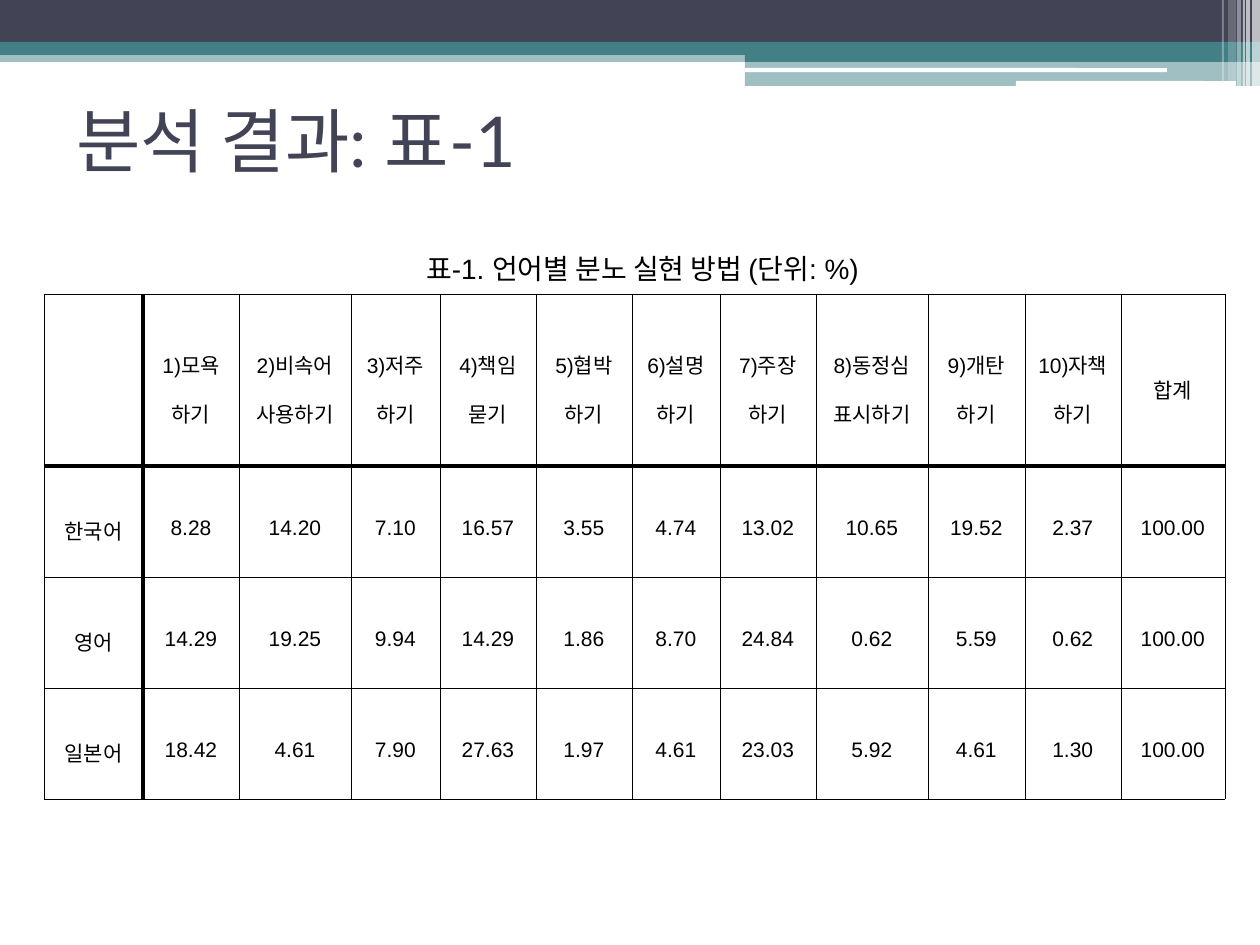
from dataclasses import dataclass

from lxml.etree import SubElement
from pptx import Presentation
from pptx.dml.color import RGBColor as Rgb
from pptx.enum.shapes import MSO_SHAPE as Shape
from pptx.enum.text import MSO_ANCHOR as Anchor, MSO_AUTO_SIZE as AutoSize, PP_ALIGN as Align
from pptx.oxml.ns import qn
from pptx.util import Emu, Pt


@dataclass(frozen=True)
class Theme:
    navy: str = "424456"
    teal: str = "438086"
    white: str = "FFFFFF"
    black: str = "000000"
    heading_font: str = "Lato"
    body_font: str = "Arial"
    title_size: int = 40
    caption_size: int = 16
    cell_size: int = 12
    thin: float = 0.28
    thick: float = 2.55


def px(length):
    return Emu(round(length * 914400 / 126))


class SlideBuilder:
    """Draws themed elements on one slide, with lengths in px."""

    def __init__(self, slide, theme):
        self.slide = slide
        self.theme = theme

    def bar(self, box, color, opacity=100, kind=Shape.RECTANGLE):
        bar = self.slide.shapes.add_shape(kind, *map(px, box))
        bar.shadow.inherit = False
        bar.fill.solid()
        bar.fill.fore_color.rgb = Rgb.from_string(color)
        bar.line.fill.background()
        if opacity < 100:
            tint = bar._element.spPr.find(".//" + qn("a:srgbClr"))
            SubElement(tint, qn("a:alpha"), val=str(opacity * 1000))

    def place(self, holder, box, text, anchor):
        holder.left, holder.top, holder.width, holder.height = map(px, box)
        frame = holder.text_frame
        frame.text = text
        frame.word_wrap = True
        frame.auto_size = AutoSize.NONE
        frame.vertical_anchor = anchor
        return frame

    def style(self, paragraph, align, font, size, color):
        paragraph.alignment = align
        paragraph.font.name = font
        paragraph.font.size = Pt(size)
        paragraph.font.color.rgb = Rgb.from_string(color)

    def title(self, box, text):
        theme = self.theme
        frame = self.place(self.slide.shapes.title, box, text, Anchor.MIDDLE)
        self.style(frame.paragraphs[0], Align.LEFT, theme.heading_font, theme.title_size, theme.navy)

    def caption(self, box, text, drop, indent):
        theme = self.theme
        frame = self.place(self.slide.placeholders[1], box, text, Anchor.TOP)
        frame.margin_top = px(drop)
        line = frame.paragraphs[0]
        self.style(line, Align.CENTER, theme.body_font, theme.caption_size, theme.black)
        line.space_before = Pt(0)
        props = line._p.get_or_add_pPr()
        props.set("marL", str(px(indent)))
        props.set("indent", "0")
        SubElement(props, qn("a:buNone"))

    def border(self, cell, side, width):
        edge = SubElement(cell._tc.get_or_add_tcPr(), qn(f"a:ln{side}"), w=str(Pt(width)))
        fill = SubElement(edge, qn("a:solidFill"))
        SubElement(fill, qn("a:srgbClr"), val=self.theme.black)

    def cell(self, cell, text, row, column):
        theme = self.theme
        heavy = {"L": column == 1, "R": column == 0, "T": row == 1, "B": row == 0}
        for side, is_heavy in heavy.items():
            self.border(cell, side, theme.thick if is_heavy else theme.thin)
        cell.fill.background()
        cell.vertical_anchor = Anchor.MIDDLE
        cell.margin_left = cell.margin_right = px(9)
        cell.margin_top = cell.margin_bottom = px(3)
        cell.text = text
        line = cell.text_frame.paragraphs[0]
        self.style(line, Align.CENTER, theme.body_font, theme.cell_size, theme.black)
        line.line_spacing = 1.6

    def table(self, left, top, widths, heights, rows):
        box = map(px, (left, top, sum(widths), sum(heights)))
        table = self.slide.shapes.add_table(len(rows), len(widths), *box).table
        table.first_row = table.horz_banding = False
        for column, width in zip(table.columns, widths):
            column.width = px(width)
        for row, height in zip(table.rows, heights):
            row.height = px(height)
        for r, row in enumerate(rows):
            for c, text in enumerate(row):
                self.cell(table.cell(r, c), text, r, c)


METHODS = ["", "1)모욕 하기", "2)비속어 사용하기", "3)저주 하기", "4)책임 묻기", "5)협박 하기",
           "6)설명 하기", "7)주장 하기", "8)동정심 표시하기", "9)개탄 하기", "10)자책 하기", "합계"]
SHARES = {
    "한국어": [8.28, 14.20, 7.10, 16.57, 3.55, 4.74, 13.02, 10.65, 19.52, 2.37, 100],
    "영어": [14.29, 19.25, 9.94, 14.29, 1.86, 8.70, 24.84, 0.62, 5.59, 0.62, 100],
    "일본어": [18.42, 4.61, 7.90, 27.63, 1.97, 4.61, 23.03, 5.92, 4.61, 1.30, 100],
}
COLUMN_WIDTHS = [99, 96, 112, 89, 96, 96, 88, 96, 112, 97, 96, 104]
ROW_HEIGHTS = [172, 111, 111, 111]
STRIPES = [(1252, 8, 86, 65), (1246, 4, 86, 65), (1243, 2, 86, 60),
           (1237, 4, 86, 40), (1228, 8, 81, 20), (1222, 2, 81, 30)]


def main():
    theme = Theme()
    deck = Presentation()
    deck.slide_width, deck.slide_height = px(1260), px(945)
    page = SlideBuilder(deck.slides.add_slide(deck.slide_layouts[1]), theme)
    for holder in list(page.slide.placeholders)[2:]:
        holder._element.getparent().remove(holder._element)

    page.bar((0, 50, 1260, 12), theme.teal, 50)
    page.bar((0, 0, 1260, 43), theme.navy)
    page.bar((0, 42, 1260, 13), theme.teal)
    page.bar((745, 49, 515, 13), theme.teal)
    page.bar((745, 61, 515, 25), theme.teal, 50)
    for track in ((745, 68, 422, 4), (1016, 81, 220, 5)):
        page.bar(track, theme.white, kind=Shape.ROUNDED_RECTANGLE)
    for left, width, height, opacity in STRIPES:
        page.bar((left, 0, width, height), theme.white, opacity)

    page.title((64, 66, 1134, 147), "분석 결과: 표-1")
    page.caption((64, 195, 1142, 714), "표-1. 언어별 분노 실현 방법 (단위: %)", drop=57, indent=15)
    shares = [[language, *(f"{share:.2f}" for share in values)] for language, values in SHARES.items()]
    page.table(44, 294, COLUMN_WIDTHS, ROW_HEIGHTS, [METHODS, *shares])
    deck.save("out.pptx")


if __name__ == "__main__":
    main()
